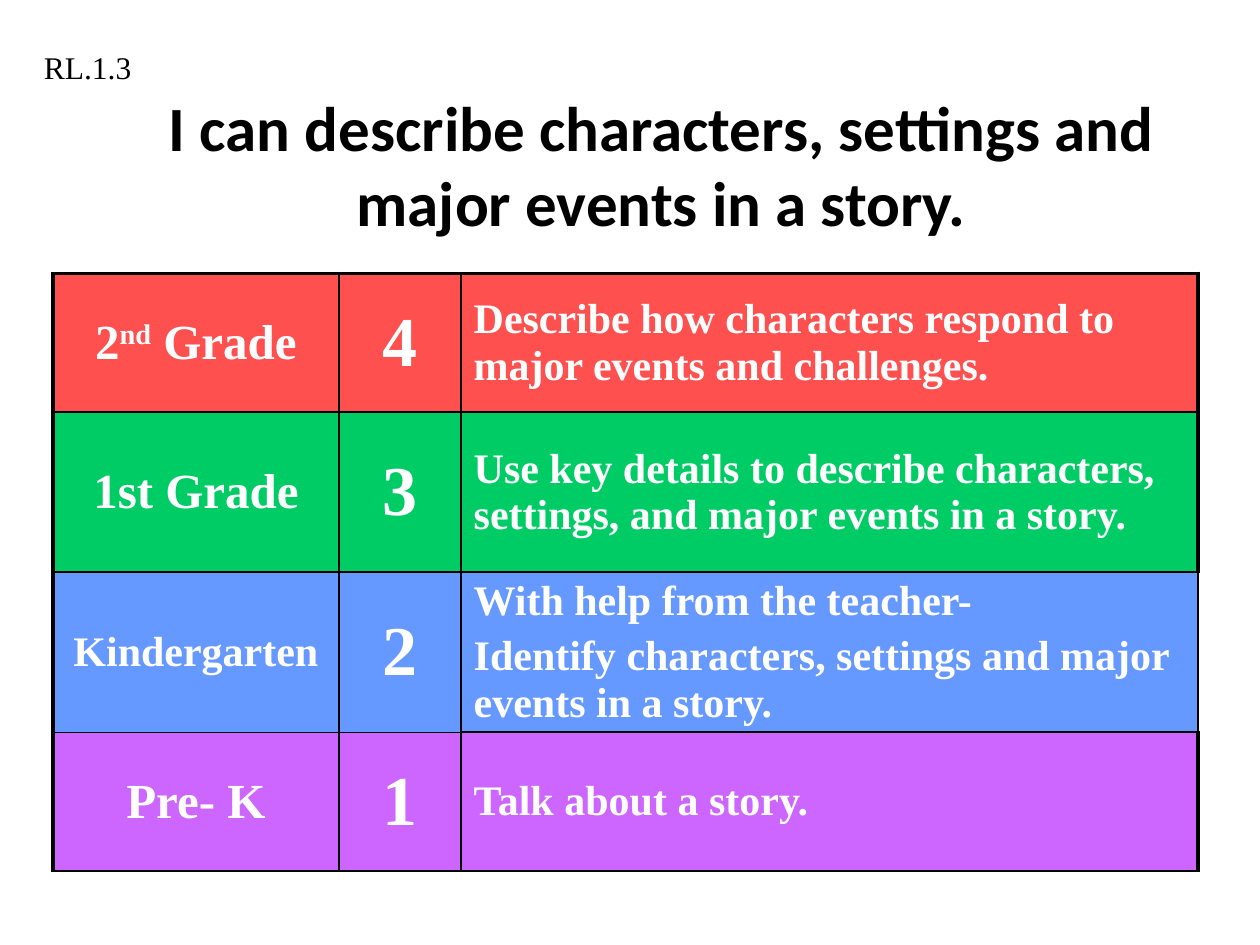
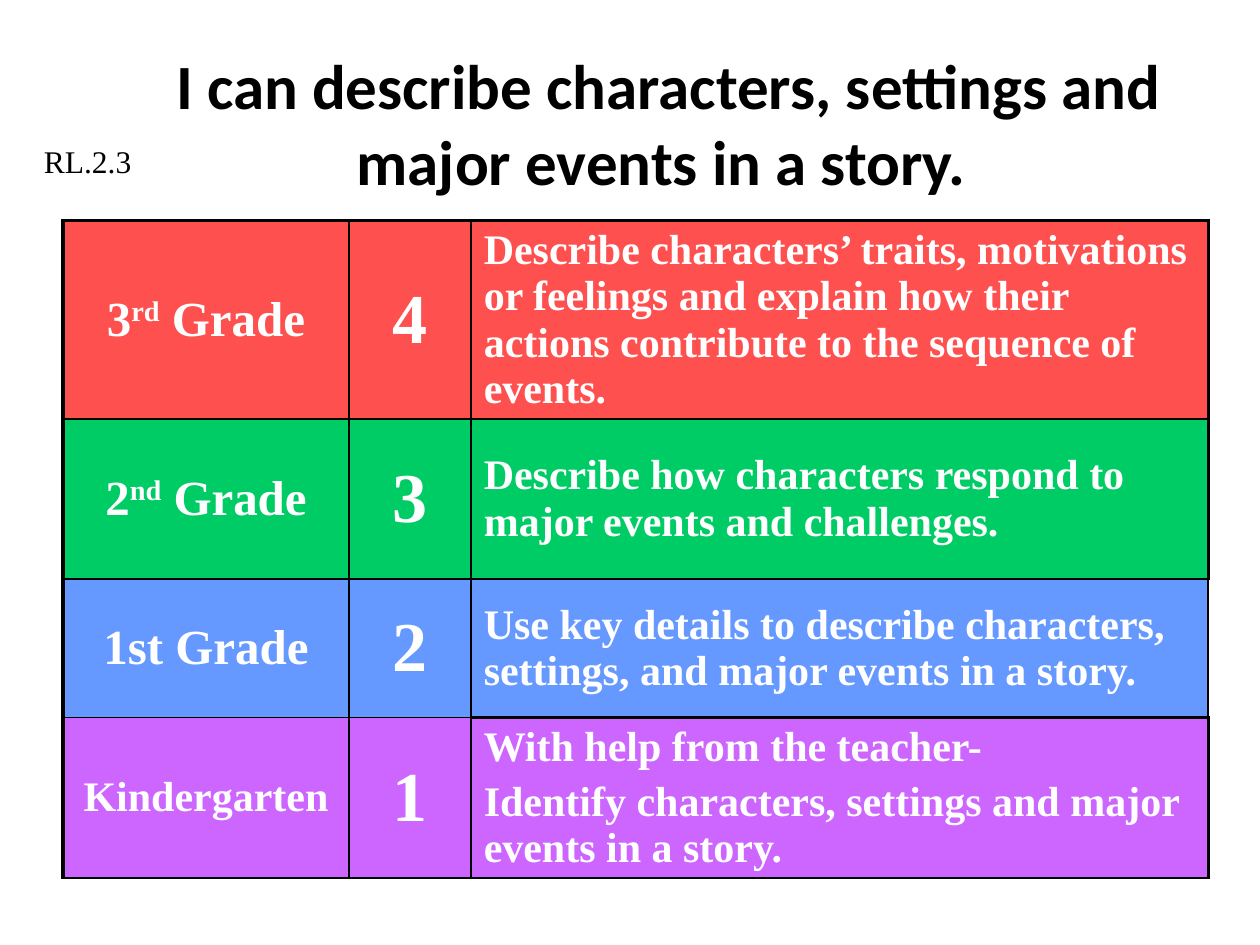
from lxml.etree import SubElement
from pptx import Presentation
from pptx.dml.color import RGBColor
from pptx.enum.text import MSO_ANCHOR, MSO_AUTO_SIZE, PP_ALIGN
from pptx.oxml.ns import qn
from pptx.util import Inches, Pt

BLACK = RGBColor(0x00, 0x00, 0x00)
WHITE = RGBColor(0xFF, 0xFF, 0xFF)
RED = RGBColor(0xFF, 0x50, 0x50)
GREEN = RGBColor(0x00, 0xCC, 0x66)
BLUE = RGBColor(0x66, 0x99, 0xFF)
PURPLE = RGBColor(0xCC, 0x66, 0xFF)
LEVEL_COLORS = (RED, GREEN, BLUE, PURPLE)

TITLE_FONT = "Calibri"
BODY_FONT = "Times New Roman"
COLUMN_WIDTHS = (2.27, 0.97, 5.85)
ROW_HEIGHTS = (1.1, 1.27, 1.1, 1.1)
THIN, MEDIUM, THICK = 1, 1.5, 2.25

GOAL = "I can describe characters, settings and major events in a story."
KINDERGARTEN = (
    ("Kindergarten",),
    ("With help from the teacher-",
     "Identify characters, settings and major events in a story."),
)
FIRST_GRADE = (
    ("1st Grade",),
    ("Use key details to describe characters, settings, and major events in a story.",),
)
SECOND_GRADE = (
    ("2", "nd", " Grade"),
    ("Describe how characters respond to major events and challenges.",),
)
THIRD_GRADE = (
    ("3", "rd", " Grade"),
    ("Describe characters’ traits, motivations or feelings and explain how "
     "their actions contribute to the sequence of events.",),
)
PRE_K = (("Pre- K",), ("Talk about a story.",))


def add_run(paragraph, text, size, font=BODY_FONT, color=WHITE, bold=True):
    """Append a formatted run and return it."""
    run = paragraph.add_run()
    run.text = text
    run.font.name = font
    run.font.size = Pt(size)
    run.font.bold = bold
    run.font.color.rgb = color
    return run


def add_goal_title(slide, goal, top):
    """Place the learning goal in the lower part of the title area."""
    title = slide.shapes.title
    title.left, title.top = Inches(1), Inches(top)
    title.width, title.height = Inches(8.5), Inches(1)
    frame = title.text_frame
    frame.word_wrap = True
    frame.auto_size = MSO_AUTO_SIZE.NONE
    frame.vertical_anchor = MSO_ANCHOR.MIDDLE
    frame.margin_top = Inches(0.65)
    paragraph = frame.paragraphs[0]
    paragraph.alignment = PP_ALIGN.CENTER
    add_run(paragraph, goal, 36, TITLE_FONT, BLACK)


def add_standard_code(slide, code, top):
    """Add the code of the standard at the left edge."""
    label = slide.shapes.add_textbox(Inches(0.25), Inches(top), Inches(1.42), Inches(0.4))
    frame = label.text_frame
    frame.word_wrap = True
    frame.auto_size = MSO_AUTO_SIZE.SHAPE_TO_FIT_TEXT
    add_run(frame.paragraphs[0], code, 18, color=BLACK, bold=False)


def border_widths(row, column):
    """Return the left, right, top and bottom line widths of a cell."""
    inner = MEDIUM if row == 2 else THIN
    left = THICK if column == 0 else inner
    right = inner
    if column == 2:
        right = MEDIUM if row == 2 else THICK
    top = THICK if row == 0 else MEDIUM if row == 1 or column == 2 else THIN
    bottom = MEDIUM if row in (0, 3) or column == 2 else THIN
    return left, right, top, bottom


def style_cell(cell, row, column):
    """Set the borders, fill and anchor of a cell."""
    properties = cell._tc.get_or_add_tcPr()
    for side, width in zip("LRTB", border_widths(row, column)):
        line = SubElement(properties, qn(f"a:ln{side}"), w=str(Pt(width)))
        fill = SubElement(line, qn("a:solidFill"))
        SubElement(fill, qn("a:srgbClr"), val=str(BLACK))
    cell.fill.solid()
    cell.fill.fore_color.rgb = LEVEL_COLORS[row]
    cell.vertical_anchor = MSO_ANCHOR.MIDDLE


def write_cell(cell, paragraphs, size, alignment):
    """Write paragraphs of runs, raising the second run as an ordinal suffix."""
    frame = cell.text_frame
    for index, parts in enumerate(paragraphs):
        paragraph = frame.add_paragraph() if index else frame.paragraphs[0]
        paragraph.alignment = alignment
        paragraph.space_before = Pt(size * 0.2)
        for position, text in enumerate(parts):
            run = add_run(paragraph, text, size)
            if position == 1:
                run._r.get_or_add_rPr().set("baseline", "30000")


def add_scale(slide, levels, left, top):
    """Add the four-level scale, highest level first."""
    table = slide.shapes.add_table(
        len(levels), len(COLUMN_WIDTHS), Inches(left), Inches(top),
        Inches(sum(COLUMN_WIDTHS)), Inches(sum(ROW_HEIGHTS))).table
    table.first_row = False
    table.horz_banding = False
    for column, width in zip(table.columns, COLUMN_WIDTHS):
        column.width = Inches(width)
    for row, (grade, skills) in enumerate(levels):
        table.rows[row].height = Inches(ROW_HEIGHTS[row])
        grade_size = 24 if grade == KINDERGARTEN[0] else 28
        score = str(len(levels) - row)
        contents = (
            ([grade], grade_size, PP_ALIGN.CENTER),
            ([(score,)], 40, PP_ALIGN.CENTER),
            ([(skill,) for skill in skills], 24, PP_ALIGN.LEFT),
        )
        for column, content in enumerate(contents):
            cell = table.cell(row, column)
            style_cell(cell, row, column)
            write_cell(cell, *content)


def add_scale_slide(deck, goal, title_top, code, code_top, levels, scale_at):
    """Add a slide with a goal, its scale and its standard code."""
    slide = deck.slides.add_slide(deck.slide_layouts[5])
    add_goal_title(slide, goal, title_top)
    add_scale(slide, levels, *scale_at)
    add_standard_code(slide, code, code_top)


def main():
    """Build and save the two scale slides."""
    deck = Presentation()
    deck.slide_width, deck.slide_height = Inches(10), Inches(7.5)
    add_scale_slide(deck, GOAL, 0.5, "RL.1.3", 0.33,
                    (SECOND_GRADE, FIRST_GRADE, KINDERGARTEN, PRE_K), (0.42, 2.17))
    add_scale_slide(deck, " " + GOAL, 0.17, "RL.2.3", 1.08,
                    (THIRD_GRADE, SECOND_GRADE, FIRST_GRADE, KINDERGARTEN), (0.5, 1.75))
    deck.save("out.pptx")


if __name__ == "__main__":
    main()
